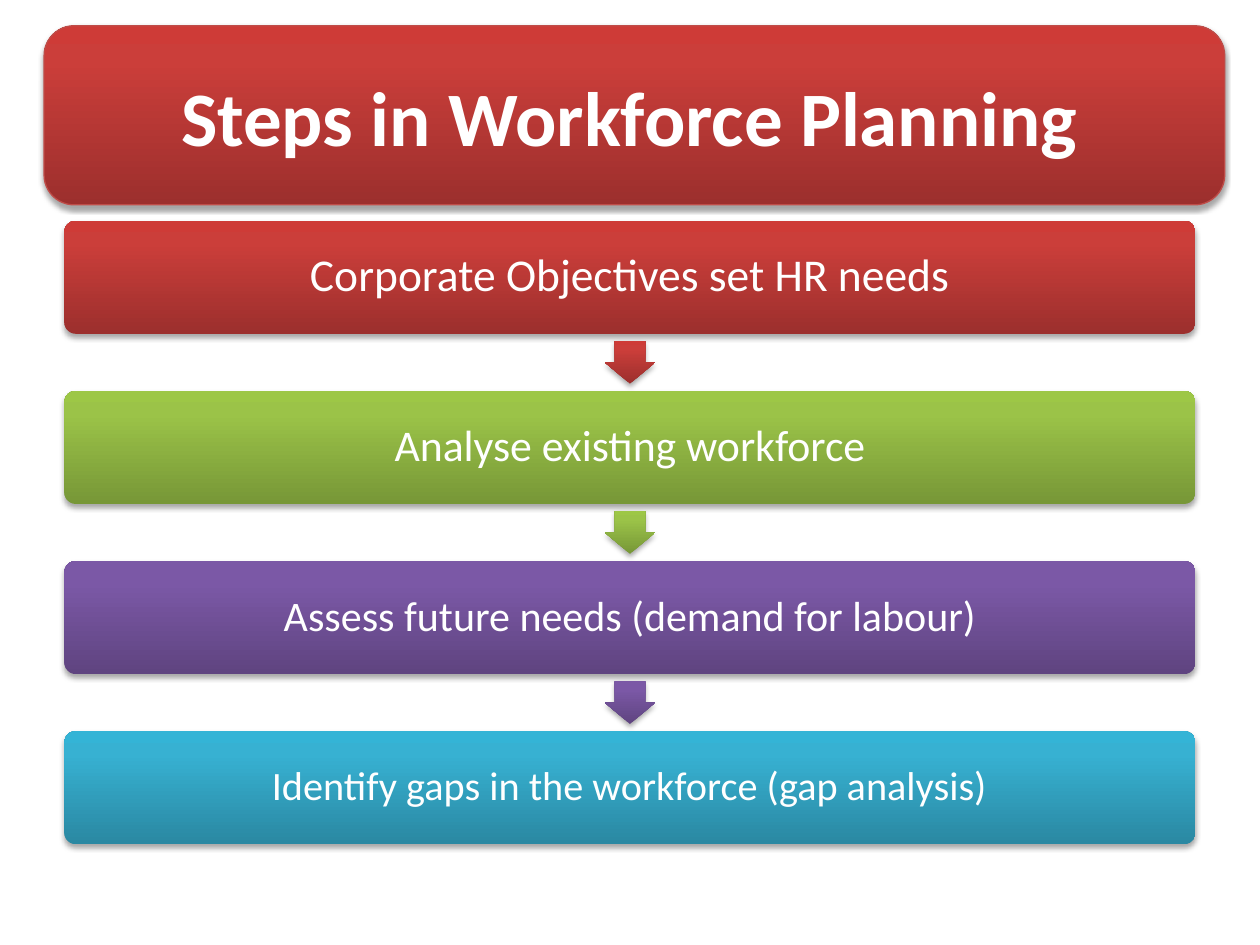
from lxml import etree
from pptx import Presentation
from pptx.dml.color import RGBColor
from pptx.enum.shapes import MSO_SHAPE
from pptx.enum.text import MSO_ANCHOR, PP_ALIGN
from pptx.oxml.ns import qn
from pptx.util import Cm, Pt

ROUNDED, ARROW = MSO_SHAPE.ROUNDED_RECTANGLE, MSO_SHAPE.DOWN_ARROW
MIDDLE, CENTER = MSO_ANCHOR.MIDDLE, PP_ALIGN.CENTER

# Content: gradients run from bottom to top
STOPS = (0, 80, 100)
RED = ("9C2F2D", "CB3E3A", "CE3B37")
GREEN = ("779737", "9BC348", "9DC746")
PURPLE = ("5F4480", "7B58A6", "7C57A8")
BLUE = ("2A88A2", "37B1D2", "34B4D6")

TITLE = "Steps in Workforce Planning"
STEPS = [
    ("Corporate Objectives set HR needs", 26, RED),
    ("Analyse existing workforce", 25, GREEN),
    ("Assess future needs (demand for labour)", 24, PURPLE),
    ("Identify gaps in the workforce (gap analysis)", 23, BLUE),
]

# Layout in cm
SLIDE_W, SLIDE_H = 25.4, 19.05
STEP_W, STEP_H, STEP_TOP, PITCH = 22.8, 2.28, 4.45, 3.43
ARROW_W, ARROW_H = 1.02, 0.86


def color(value):
    return RGBColor.from_string(value)


def add_gradient(sp, colors):
    sp.fill.gradient()
    sp.fill.gradient_angle = 90
    stops = sp._element.spPr.find(qn("a:gradFill")).find(qn("a:gsLst"))
    for old in list(stops):
        stops.remove(old)
    for pos, value in zip(STOPS, colors):
        gs = etree.SubElement(stops, qn("a:gs"), pos=str(pos * 1000))
        etree.SubElement(gs, qn("a:srgbClr"), val=value)


def add_shadow(sp):
    sp.shadow.inherit = False
    effects = sp._element.spPr.find(qn("a:effectLst"))
    shadow = etree.SubElement(effects, qn("a:outerShdw"), blurRad="40000",
                              dist="23000", dir="5400000", rotWithShape="0")
    black = etree.SubElement(shadow, qn("a:srgbClr"), val="000000")
    etree.SubElement(black, qn("a:alpha"), val="35000")


def add_block(s, kind, left, top, width, height, colors, adjustments=()):
    sp = s.shapes.add_shape(kind, Cm(left), Cm(top), Cm(width), Cm(height))
    for i, value in enumerate(adjustments):
        sp.adjustments[i] = value
    add_gradient(sp, colors)
    sp.line.fill.background()
    add_shadow(sp)
    return sp


def add_text(sp, text, size, bold=False):
    tf = sp.text_frame
    tf.word_wrap = True
    tf.vertical_anchor = MIDDLE
    p = tf.paragraphs[0]
    p.text = text
    p.alignment = CENTER
    p.font.name = "Calibri"
    p.font.size = Pt(size)
    p.font.bold = bold
    p.font.color.rgb = color("FFFFFF")
    return p


prs = Presentation()
prs.slide_width, prs.slide_height = Cm(SLIDE_W), Cm(SLIDE_H)
s = prs.slides.add_slide(prs.slide_layouts[6])

# Title banner, its text centred on the slide
banner = add_block(s, ROUNDED, 0.89, 0.52, 23.8, 3.61, RED)
banner.line.color.rgb = color("BF4C48")
banner.line.width = Pt(0.75)
add_text(banner, TITLE, 44, bold=True)
banner.text_frame.margin_right = Cm(0.43)

# Steps, with an arrow centred in each gap
for i, (text, size, colors) in enumerate(STEPS):
    top = STEP_TOP + i * PITCH
    step = add_block(s, ROUNDED, (SLIDE_W - STEP_W) / 2, top,
                     STEP_W, STEP_H, colors, [0.1])
    add_text(step, text, size).line_spacing = 0.9
    if i < len(STEPS) - 1:
        arrow_top = top + (STEP_H + PITCH - ARROW_H) / 2
        add_block(s, ARROW, (SLIDE_W - ARROW_W) / 2, arrow_top,
                  ARROW_W, ARROW_H, colors, [0.6, 0.5])

prs.save("out.pptx")
